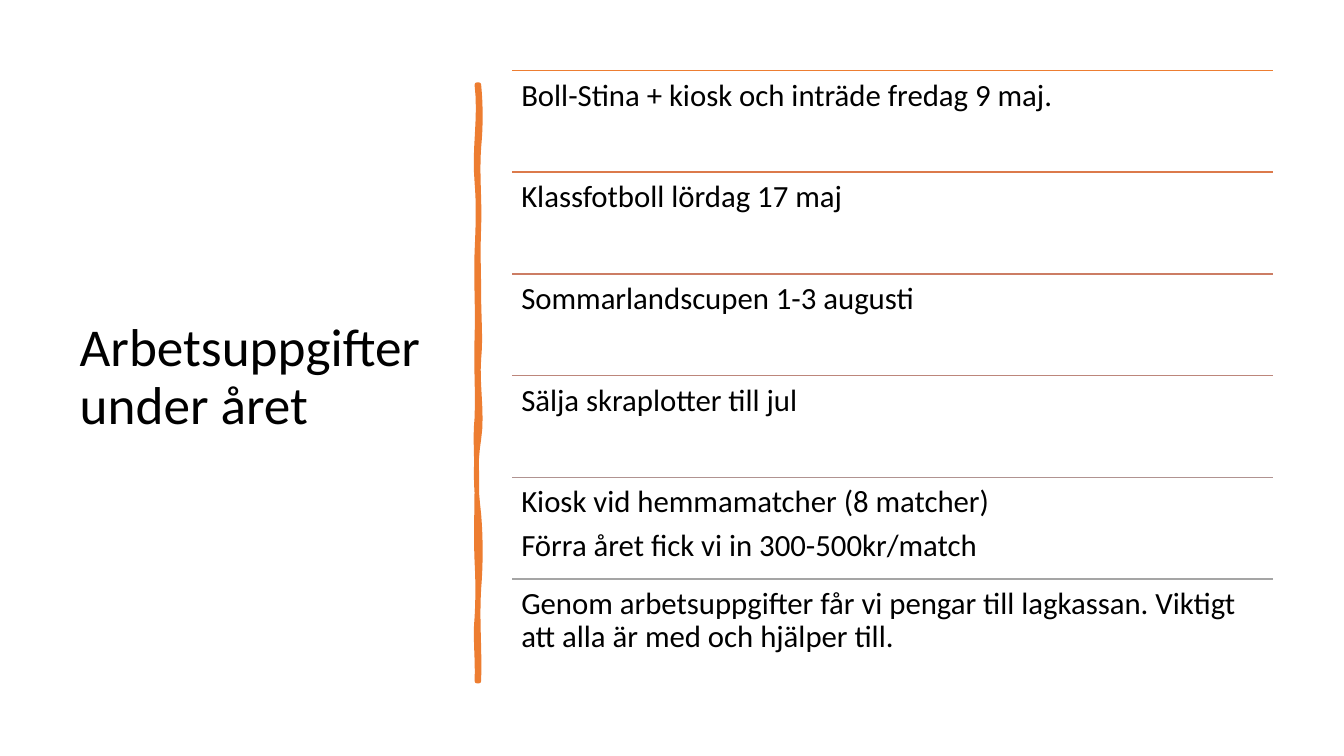
"""Builds a slide listing the team's tasks for the year beside a hand-drawn stroke."""
from dataclasses import dataclass

from lxml import etree
from pptx import Presentation
from pptx.dml.color import RGBColor
from pptx.enum.shapes import MSO_CONNECTOR
from pptx.enum.text import MSO_ANCHOR, MSO_AUTO_SIZE, PP_ALIGN
from pptx.oxml.ns import qn
from pptx.slide import Slide
from pptx.util import Emu, Inches, Pt

STRAIGHT = MSO_CONNECTOR.STRAIGHT
MIDDLE = MSO_ANCHOR.MIDDLE
TOP = MSO_ANCHOR.TOP
LEFT = PP_ALIGN.LEFT
NO_AUTOFIT = MSO_AUTO_SIZE.NONE

SLIDE_WIDTH = Inches(13.33)
SLIDE_HEIGHT = Inches(7.5)
FONT = "Calibri"
BLACK = "000000"
ORANGE = "ED7D31"

LIST_LEFT, LIST_WIDTH = 38.11, 56.64
LIST_TOP, ROW_HEIGHT = 9.33, 13.45
STROKE_TOP = 11.2
STROKE_LEFT, STROKE_RIGHT = 35.48, 35.63
STEPS = 8


@dataclass(frozen=True)
class Task:
    """One row of the list: the colour of its rule and its paragraphs."""
    color: str
    lines: tuple[str, ...]


@dataclass(frozen=True)
class Sway:
    """A span of a stroke edge: where it ends and how far it bends early and late."""
    end: float
    early: float
    late: float


TASKS = (
    Task(ORANGE, ("Boll-Stina + kiosk och inträde fredag 9 maj.",)),
    Task("DC7A4B", ("Klassfotboll lördag 17 maj",)),
    Task("CC7D64", ("Sommarlandscupen 1-3 augusti",)),
    Task("BD867B", ("Sälja skraplotter till jul",)),
    Task("B09391", ("Kiosk vid hemmamatcher (8 matcher)",
                    "Förra året fick vi in 300-500kr/match")),
    Task("A5A5A5", ("Genom arbetsuppgifter får vi pengar till lagkassan. "
                    "Viktigt att alla är med och hjälper till.",)),
)

RIGHT_EDGE = (
    Sway(19.5, 0.15, 0.15), Sway(30.1, -0.15, 0.08), Sway(39.2, -0.08, 0),
    Sway(47.5, 0, 0.15), Sway(58.1, -0.15, 0.3), Sway(68, -0.3, -0.23),
    Sway(77.9, 0.15, 0.15), Sway(90.1, -0.15, 0.08),
)
LEFT_EDGE = (
    Sway(81.7, 0.08, -0.15), Sway(74.3, 0.08, 0.08), Sway(63.6, -0.08, 0),
    Sway(55.3, 0, -0.15), Sway(44.7, 0.08, -0.08), Sway(33.3, 0.08, -0.08),
    Sway(24.1, 0.08, 0.15), Sway(STROKE_TOP, -0.23, 0.3),
)


def across(share: float) -> Emu:
    """Turn a percentage of the slide's width into a length."""
    return Emu(round(SLIDE_WIDTH * share / 100))


def down(share: float) -> Emu:
    """Turn a percentage of the slide's height into a length."""
    return Emu(round(SLIDE_HEIGHT * share / 100))


def rgb(color: str) -> RGBColor:
    """Turn a hex string into a colour."""
    return RGBColor.from_string(color)


def add_span(para, text: str, size: float) -> None:
    """Add one run of black text to a paragraph."""
    para.alignment = LEFT
    para.line_spacing = 0.9
    span = para.add_run()
    span.text = text
    span.font.name = FONT
    span.font.size = Pt(size)
    span.font.color.rgb = rgb(BLACK)


def add_title(page: Slide, text: str) -> None:
    """Place and format the title placeholder."""
    title = page.shapes.title
    title.left, title.top = across(5.18), down(LIST_TOP)
    title.width, title.height = across(28.06), down(81.47)
    frame = title.text_frame
    frame.word_wrap = True
    frame.auto_size = NO_AUTOFIT
    frame.vertical_anchor = MIDDLE
    add_span(frame.paragraphs[0], text, 38)


def trace_edge(x: float, start: float, sways: tuple[Sway, ...]) -> list[tuple[int, int]]:
    """Sample a swaying edge from its start to the end of its last span."""
    points = [(across(x), down(start))]
    for sway in sways:
        for step in range(1, STEPS + 1):
            t = step / STEPS
            bend = 3 * t * (1 - t) * ((1 - t) * sway.early + t * sway.late)
            points.append((across(x + bend), down(start + t * (sway.end - start))))
        start = sway.end
    return points


def add_stroke(page: Slide) -> None:
    """Draw the uneven vertical stroke between title and list."""
    outline = trace_edge(STROKE_RIGHT, STROKE_TOP, RIGHT_EDGE)
    outline += trace_edge(STROKE_LEFT, RIGHT_EDGE[-1].end, LEFT_EDGE)
    builder = page.shapes.build_freeform(*outline[0])
    builder.add_line_segments(outline[1:], close=True)
    stroke = builder.convert_to_shape()
    stroke.shadow.inherit = False
    stroke.fill.solid()
    stroke.fill.fore_color.rgb = rgb(ORANGE)
    stroke.line.color.rgb = rgb(ORANGE)
    stroke.line.width = Pt(3.25)


def add_rule(page: Slide, top: float, color: str) -> None:
    """Draw the thin line above a task."""
    rule = page.shapes.add_connector(
        STRAIGHT, across(LIST_LEFT), down(top), across(LIST_LEFT + LIST_WIDTH), down(top))
    rule.line.color.rgb = rgb(color)
    rule.line.width = Pt(1)
    etree.SubElement(rule._element.spPr, qn("a:effectLst"))


def add_task(page: Slide, row: int, task: Task) -> None:
    """Draw one task with its rule and text."""
    top = LIST_TOP + row * ROW_HEIGHT
    add_rule(page, top, task.color)
    box = page.shapes.add_textbox(
        across(LIST_LEFT), down(top), across(LIST_WIDTH), down(ROW_HEIGHT))
    frame = box.text_frame
    frame.word_wrap = True
    frame.vertical_anchor = TOP
    frame.margin_left = frame.margin_right = Inches(0.09)
    frame.margin_top = frame.margin_bottom = Inches(0.09)
    for index, line in enumerate(task.lines):
        para = frame.add_paragraph() if index else frame.paragraphs[0]
        para.space_after = Pt(7.7)
        add_span(para, line, 22)


def main() -> None:
    """Build and save the deck."""
    deck = Presentation()
    deck.slide_width, deck.slide_height = SLIDE_WIDTH, SLIDE_HEIGHT
    page = deck.slides.add_slide(deck.slide_layouts.get_by_name("Title Only"))
    add_title(page, "Arbetsuppgifter under året")
    add_stroke(page)
    for row, task in enumerate(TASKS):
        add_task(page, row, task)
    deck.save("out.pptx")


if __name__ == "__main__":
    main()
